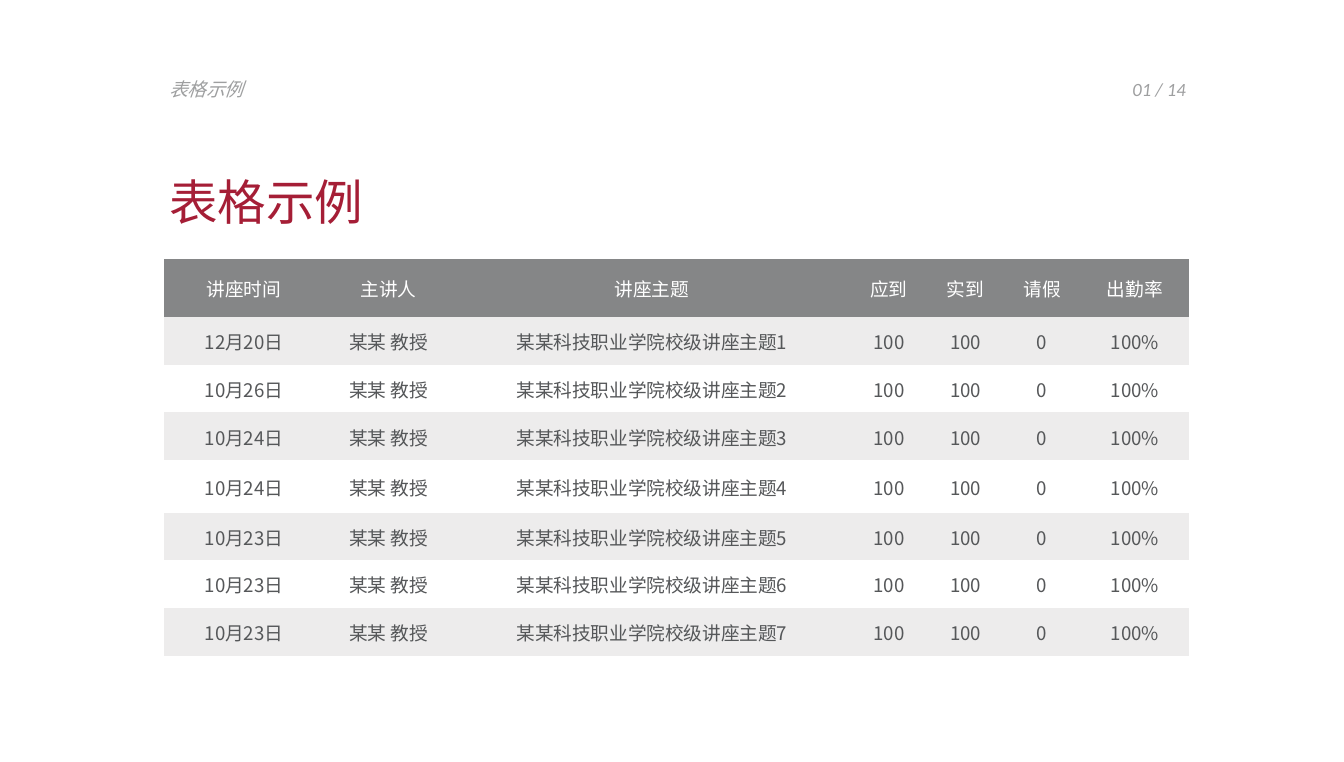
"""Build a slide with a lecture attendance table."""
import pptx
import pptx.dml.color
import pptx.enum.text
import pptx.oxml.ns
import pptx.util
from lxml import etree

Inches = pptx.util.Inches
RGBColor = pptx.dml.color.RGBColor
PP_ALIGN = pptx.enum.text.PP_ALIGN
MSO_ANCHOR = pptx.enum.text.MSO_ANCHOR

RED = RGBColor(0xA5, 0x1E, 0x36)
MUTED = RGBColor(0x9E, 0x9F, 0xA0)
DARK = RGBColor(0x55, 0x57, 0x59)
HEADER = RGBColor(0x85, 0x86, 0x87)
BAND = RGBColor(0xED, 0xEC, 0xEC)
WHITE = RGBColor(0xFF, 0xFF, 0xFF)
CJK = "Noto Sans CJK SC"


def set_text(tf, text, size=10, font=CJK, color=DARK, italic=False,
             align=PP_ALIGN.LEFT, spacing=None):
    p = tf.paragraphs[0]
    p.alignment = align
    if spacing:
        p.line_spacing = pptx.util.Pt(spacing)
    r = p.add_run()
    r.text = text
    r.font.size = pptx.util.Pt(size)
    r.font.name = font
    r.font.italic = italic
    r.font.color.rgb = color
    ea = etree.SubElement(r.font._element, pptx.oxml.ns.qn("a:ea"))
    ea.set("typeface", CJK)


prs = pptx.Presentation()
prs.slide_width, prs.slide_height = Inches(10), Inches(5.67)
s = prs.slides.add_slide(prs.slide_layouts[5])

headings = [
    (s.shapes.title, (1.16, 1.3, 3.68, 0.47), "表格示例",
     dict(size=26, color=RED, spacing=26)),
    (s.shapes.add_textbox(0, 0, 0, 0), (1.16, 0.56, 2.39, 0.24), "表格示例",
     dict(color=MUTED, italic=True, spacing=10)),
    (s.shapes.add_textbox(0, 0, 0, 0), (7.95, 0.56, 0.97, 0.24), "01 / 14",
     dict(font="Calibri", color=MUTED, italic=True, spacing=10,
          align=PP_ALIGN.RIGHT)),
]
for sp, box, text, style in headings:
    sp.left, sp.top, sp.width, sp.height = [Inches(v) for v in box]
    tf = sp.text_frame
    tf.word_wrap = True
    tf.auto_size = pptx.enum.text.MSO_AUTO_SIZE.SHAPE_TO_FIT_TEXT
    tf.vertical_anchor = MSO_ANCHOR.TOP
    set_text(tf, text, **style)

dates = ["12月20日", "10月26日", "10月24日", "10月24日",
         "10月23日", "10月23日", "10月23日"]
rows = [["讲座时间", "主讲人", "讲座主题", "应到", "实到", "请假", "出勤率"]]
for n, date in enumerate(dates, 1):
    rows.append([date, "某某 教授", f"某某科技职业学院校级讲座主题{n}",
                 "100", "100", "0", "100%"])

widths = [1.19, 0.96, 2.96, 0.57, 0.57, 0.57, 0.81]
table_height, header_height, tall_height = 2.95, 0.43, 0.39
row_height = (table_height - header_height - tall_height) / 6
heights = [header_height] + [row_height] * 3 + [tall_height] + [row_height] * 3

table = s.shapes.add_table(len(rows), len(widths), Inches(1.22), Inches(1.93),
                           Inches(sum(widths)), Inches(table_height)).table
for column, width in zip(table.columns, widths):
    column.width = Inches(width)
for i, (values, height) in enumerate(zip(rows, heights)):
    table.rows[i].height = Inches(height)
    fill = HEADER if i == 0 else BAND if i % 2 else WHITE
    for j, value in enumerate(values):
        cell = table.cell(i, j)
        cell.fill.solid()
        cell.fill.fore_color.rgb = fill
        cell.vertical_anchor = MSO_ANCHOR.MIDDLE
        cell.margin_left = cell.margin_right = cell.margin_top = Inches(0.01)
        cell.margin_bottom = 0
        set_text(cell.text_frame, value, color=DARK if i else WHITE,
                 align=PP_ALIGN.CENTER)
        for side in ("a:lnL", "a:lnR", "a:lnT", "a:lnB"):
            ln = etree.Element(pptx.oxml.ns.qn(side), w="0")
            etree.SubElement(ln, pptx.oxml.ns.qn("a:noFill"))
            tcPr = cell._tc.get_or_add_tcPr()
            tcPr.insert(len(tcPr) - 1, ln)

prs.save("out.pptx")
